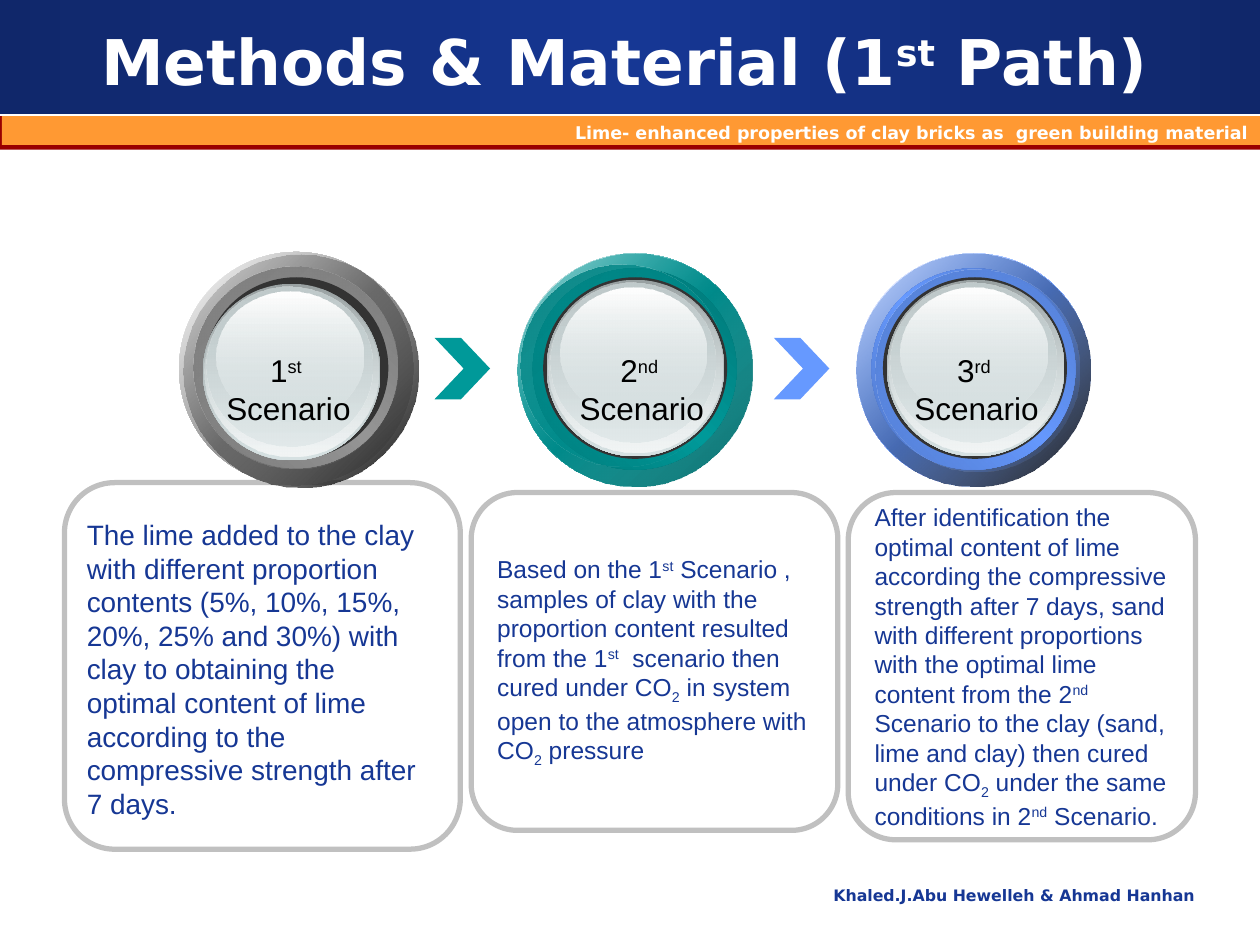
from typing import NamedTuple, Optional

from lxml import etree
from pptx import Presentation
from pptx.dml.color import RGBColor
from pptx.enum import shapes as kinds, text as txt
from pptx.oxml.ns import qn
from pptx.util import Cm, Pt

NAVY = RGBColor(0x16, 0x37, 0x94)
DEEP_NAVY = RGBColor(0x10, 0x27, 0x6A)
RED = RGBColor(0x99, 0x00, 0x00)
ORANGE = RGBColor(0xFF, 0x99, 0x33)
WHITE = RGBColor(0xFF, 0xFF, 0xFF)
BLACK = RGBColor(0x00, 0x00, 0x00)
SILVER = RGBColor(0xC0, 0xC0, 0xC0)
CHARCOAL = RGBColor(0x33, 0x33, 0x33)
GRAY = RGBColor(0x96, 0x96, 0x96)
TEAL = RGBColor(0x00, 0x99, 0x99)
BLUE = RGBColor(0x66, 0x99, 0xFF)
MIST = RGBColor(0xD6, 0xE1, 0xE2)

SHAPE = kinds.MSO_SHAPE
ALIGN = txt.PP_ALIGN
ANCHOR = txt.MSO_ANCHOR
BASELINES = {"^": "30000", "_": "-25000"}


class Box(NamedTuple):
    left: float
    top: float
    width: float
    height: float

    def lengths(self):
        return [Cm(value) for value in self]


class Stop(NamedTuple):
    position: int
    color: RGBColor
    alpha: int = 100


class Style(NamedTuple):
    font: str
    size: int
    color: RGBColor
    bold: bool = False
    align: ALIGN = ALIGN.LEFT


class Panel(NamedTuple):
    box: Box
    words: Optional[str] = None


class Orb(NamedTuple):
    left: float
    top: float
    color: RGBColor
    rim: RGBColor
    gloss: RGBColor
    shade: Stop
    shade_at: tuple
    gloss_at: tuple
    dark_at: tuple
    glass_at: tuple


class Layer(NamedTuple):
    """One sheet of the glass lens, placed from the lens corner."""
    box: Box
    start: Stop
    end: Stop


class Label(NamedTuple):
    box: Box
    ordinal: str
    wrap: bool = True


BODY = Style("Arial", 14, NAVY)
LIME_BODY = Style("Arial", 16, NAVY)
LABEL = Style("Arial", 18, BLACK, align=ALIGN.CENTER)
TITLE = Style("DejaVu Sans", 36, WHITE, True, ALIGN.CENTER)
STRAPLINE = Style("DejaVu Sans", 10, WHITE, True, ALIGN.RIGHT)
FOOTER = Style("DejaVu Sans", 9, NAVY, True, ALIGN.RIGHT)

PANELS = [
    Panel(Box(9.5, 9.93, 7.39, 6.81),
          "Based on the 1|^st| Scenario , samples of clay with the proportion content "
          "resulted from the 1|^st|  scenario then cured under CO|_2| in system open "
          "to the atmosphere with CO|_2| pressure"),
    Panel(Box(1.3, 9.73, 7.98, 7.39)),
    Panel(Box(17.1, 9.93, 7.0, 7.0),
          "After identification the optimal content of lime according the compressive "
          "strength after 7 days, sand with different proportions with the optimal lime "
          "content from the 2|^nd| Scenario to the clay (sand, lime and clay) then cured "
          "under CO|_2| under the same conditions in 2|^nd| Scenario."),
]
LIME_TEXT = ("The lime added to the clay with different proportion contents (5%, 10%, "
             "15%, 20%, 25% and 30%) with clay to obtaining the optimal content of lime "
             "according to the compressive strength after 7 days.")
ORBS = [
    Orb(17.27, 5.11, BLUE, RGBColor(0x4E, 0x75, 0xC3), RGBColor(0x54, 0x7E, 0xD1),
        Stop(100, BLACK, 90), (0, 0), (0.38, 0.33), (0.53, 0.48), (0.61, 0.53)),
    Orb(3.61, 5.08, GRAY, RGBColor(0x73, 0x73, 0x73), RGBColor(0x7B, 0x7B, 0x7B),
        Stop(100, BLACK, 90), (0.1, 0.05), (0.3, 0.3), (0.51, 0.51), (0.48, 0.64)),
    Orb(10.44, 5.11, TEAL, RGBColor(0x00, 0x75, 0x75), RGBColor(0x00, 0x7E, 0x7E),
        Stop(100, RGBColor(0x00, 0x6D, 0x6D)), (0, 0), (0.05, 0.23), (0.51, 0.48),
        (0.58, 0.53)),
]
GLASS = [
    Layer(Box(0, 0, 3.58, 3.56), Stop(0, RGBColor(0x99, 0xA1, 0xA2)), Stop(100, MIST)),
    Layer(Box(0.04, 0.03, 3.51, 3.45), Stop(0, MIST, 0),
          Stop(100, RGBColor(0xF2, 0xF5, 0xF5))),
    Layer(Box(0.08, 0.05, 3.33, 3.23), Stop(0, RGBColor(0xC1, 0xCB, 0xCC)),
          Stop(100, MIST, 48)),
    Layer(Box(0.28, 0.15, 2.95, 2.62), Stop(0, WHITE), Stop(100, MIST, 38)),
]
LABELS = [
    Label(Box(3.91, 6.96, 3.81, 1.8), "1|^st "),
    Label(Box(11.1, 6.96, 3.68, 1.8), "2|^nd "),
    Label(Box(18.16, 6.96, 3.05, 1.8), "3|^rd ", wrap=False),
]


def fill_gradient(shape, stops, angle: int) -> None:
    gradient = etree.SubElement(shape._element.spPr, qn("a:gradFill"), rotWithShape="1")
    stop_list = etree.SubElement(gradient, qn("a:gsLst"))
    for stop in stops:
        mark = etree.SubElement(stop_list, qn("a:gs"), pos=str(stop.position * 1000))
        color = etree.SubElement(mark, qn("a:srgbClr"), val=str(stop.color))
        if stop.alpha < 100:
            etree.SubElement(color, qn("a:alpha"), val=str(stop.alpha * 1000))
    etree.SubElement(gradient, qn("a:lin"), ang=str(angle * 60000), scaled="0")


def add_figure(page, kind, box: Box, fill=None, angle: int = 0):
    """Add an unlined shape; fill is a colour, a list of stops or None."""
    shape = page.shapes.add_shape(kind, *box.lengths())
    if fill is None:
        shape.fill.background()
    elif isinstance(fill, RGBColor):
        shape.fill.solid()
        shape.fill.fore_color.rgb = fill
    else:
        fill_gradient(shape, fill, angle)
    shape.line.fill.background()
    shape.shadow.inherit = False
    return shape


def write(shape, style: Style, lines, anchor=ANCHOR.TOP, wrap: bool = True) -> None:
    """Write lines whose parts are split by |, with ^ for super- and _ for subscript."""
    frame = shape.text_frame
    frame.auto_size = txt.MSO_AUTO_SIZE.NONE
    frame.word_wrap = wrap
    frame.vertical_anchor = anchor
    for index, line in enumerate(lines):
        para = frame.add_paragraph() if index else frame.paragraphs[0]
        para.alignment = style.align
        para.font.name = style.font
        para.font.size = Pt(style.size)
        para.font.bold = style.bold
        para.font.color.rgb = style.color
        for part in line.split("|"):
            span = para.add_run()
            baseline = BASELINES.get(part[0])
            span.text = part[1:] if baseline else part
            if baseline:
                span._r.get_or_add_rPr().set("baseline", baseline)


def add_text(page, box: Box, style: Style, lines, wrap: bool = True) -> None:
    write(page.shapes.add_textbox(*box.lengths()), style, lines, wrap=wrap)


def add_panel(page, panel: Panel) -> None:
    shape = add_figure(page, SHAPE.ROUNDED_RECTANGLE, panel.box)
    shape.adjustments[0] = 0.137
    shape.line.color.rgb = SILVER
    shape.line.width = Pt(3)
    if panel.words:
        write(shape, BODY, [panel.words], ANCHOR.MIDDLE)


def add_orb(page, orb: Orb) -> None:
    def disc(at, width, height, fill, angle=0):
        box = Box(orb.left + at[0], orb.top + at[1], width, height)
        add_figure(page, SHAPE.OVAL, box, fill, angle)

    ring, rim = (4.72, 4.7), (4.11, 4.06)
    disc((0, 0), *ring, [Stop(0, WHITE), Stop(50, orb.color), Stop(100, WHITE)], 45)
    disc(orb.shade_at, *ring, [Stop(0, orb.color, 32), orb.shade], 45)
    disc((0.3, 0.3), *rim, [Stop(0, orb.rim), Stop(50, orb.color), Stop(100, orb.rim)], 315)
    disc(orb.gloss_at, *rim, [Stop(0, orb.gloss), Stop(100, orb.color, 0)], 45)
    disc(orb.dark_at, 3.71, 3.66, CHARCOAL)
    for box, start, end in GLASS:
        at = (orb.glass_at[0] + box.left, orb.glass_at[1] + box.top)
        disc(at, box.width, box.height, [start, end], 90)


def main() -> None:
    deck = Presentation()
    deck.slide_width, deck.slide_height = Cm(25.4), Cm(19.05)
    page = deck.slides.add_slide(deck.slide_layouts[5])

    add_figure(page, SHAPE.RECTANGLE, Box(0, 0, 25.4, 2.31),
               [Stop(0, DEEP_NAVY), Stop(50, NAVY), Stop(100, DEEP_NAVY)])
    add_figure(page, SHAPE.RECTANGLE, Box(0, 2.34, 25.4, 0.68), RED)
    strip = add_figure(page, SHAPE.RECTANGLE, Box(0.04, 2.34, 25.36, 0.58), ORANGE)
    write(strip, STRAPLINE,
          ["Lime- enhanced properties of clay bricks as  green building material"])
    add_text(page, Box(13.89, 17.73, 10.44, 1.12), FOOTER,
             ["Khaled.J.Abu Hewelleh & Ahmad Hanhan"])
    for panel in PANELS:
        add_panel(page, panel)

    title = page.shapes.title
    title.left, title.top, title.width, title.height = Box(0.84, 0.43, 23.5, 1.57).lengths()
    write(title, TITLE, ["Methods & Material (1|^st| Path)"], ANCHOR.MIDDLE)
    page.shapes._spTree.append(title._element)  # in front of the header band

    for left, color in ((8.76, TEAL), (15.6, BLUE)):
        chevron = add_figure(page, SHAPE.CHEVRON, Box(left, 6.81, 1.12, 1.24), color)
        chevron.adjustments[0] = 0.525
    for orb in ORBS:
        add_orb(page, orb)
    for label in LABELS:
        add_text(page, label.box, LABEL, [label.ordinal, "Scenario"], label.wrap)
    add_text(page, Box(1.5, 10.31, 7.19, 6.4), LIME_BODY, [LIME_TEXT])

    deck.save("out.pptx")


if __name__ == "__main__":
    main()
